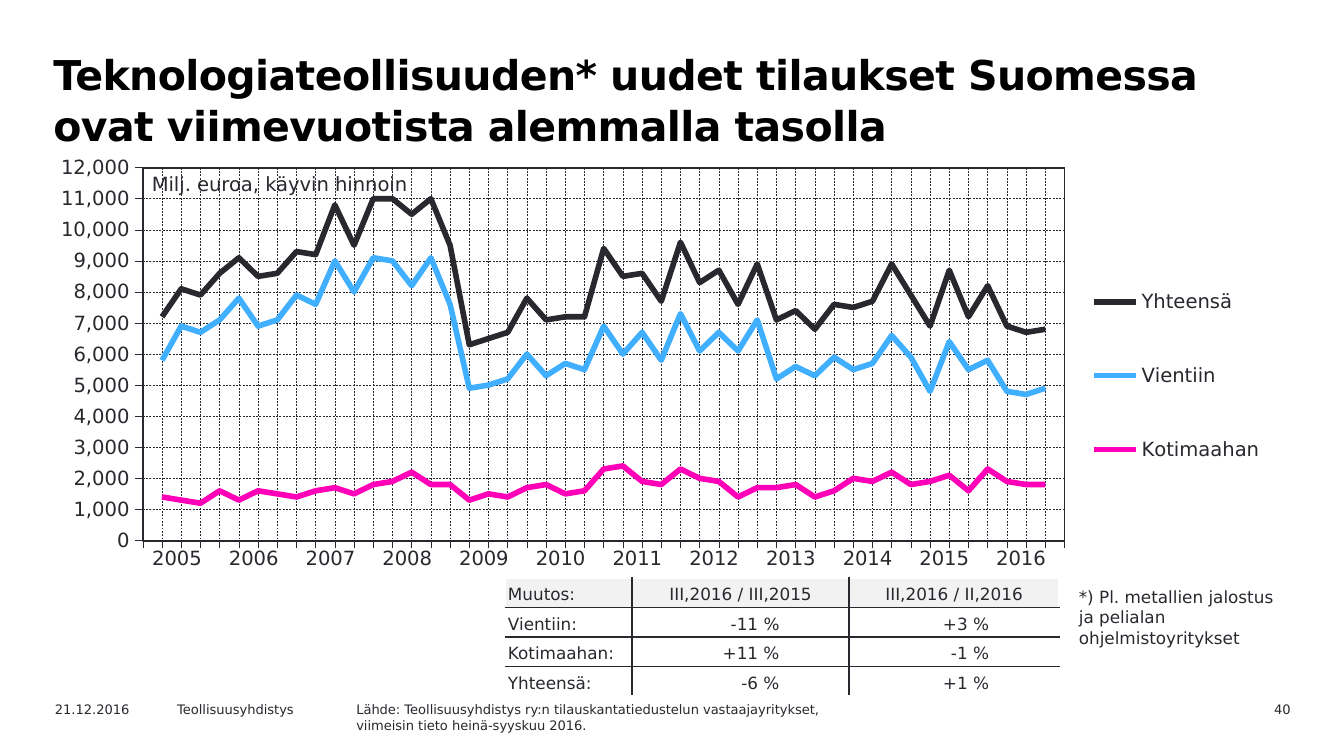
from lxml import etree
from pptx import Presentation
from pptx import util as u
from pptx.chart import data
from pptx.dml import color
from pptx.enum import chart as ec
from pptx.enum import dml, text
from pptx.oxml import ns

INK = "29282E"
WHITE = "FFFFFF"
FONT = "DejaVu Sans"
LEFT, MID, RIGHT = text.PP_ALIGN.LEFT, text.PP_ALIGN.CENTER, text.PP_ALIGN.RIGHT
PLAIN = "{2D5ABB26-0587-4C30-8999-92F81FD0307C}"
WIDE, HIGH = 23.32, 8.46

TOTAL = [72, 81, 79, 86, 91, 85, 86, 93, 92, 108, 95, 110, 110, 105, 110, 95,
         63, 65, 67, 78, 71, 72, 72, 94, 85, 86, 77, 96, 83, 87, 76, 89,
         71, 74, 68, 76, 75, 77, 89, 79, 69, 87, 72, 82, 69, 67, 68]
EXPORT = [58, 69, 67, 71, 78, 69, 71, 79, 76, 90, 80, 91, 90, 82, 91, 76,
          49, 50, 52, 60, 53, 57, 55, 69, 60, 67, 58, 73, 61, 67, 61, 71,
          52, 56, 53, 59, 55, 57, 66, 59, 48, 64, 55, 58, 48, 47, 49]
HOME = [14, 13, 12, 16, 13, 16, 15, 14, 16, 17, 15, 18, 19, 22, 18, 18,
        13, 15, 14, 17, 18, 15, 16, 23, 24, 19, 18, 23, 20, 19, 14, 17,
        17, 18, 14, 16, 20, 19, 22, 18, 19, 21, 16, 23, 19, 18, 18]
SERIES = [("Yhteensä", TOTAL, INK), ("Vientiin", EXPORT, "40AFFF"),
          ("Kotimaahan", HOME, "FF00B8")]
CHANGE = [["Muutos:", "III,2016 / III,2015", "III,2016 / II,2016"],
          ["Vientiin:", "-11 %", "+3 %"],
          ["Kotimaahan:", "+11 %", "-1 %"],
          ["Yhteensä:", "-6 %", "+1 %"]]


def rgb(code):
    return color.RGBColor.from_string(code)


def sub(node, tag, **attrs):
    return etree.SubElement(node, ns.qn(tag), **attrs)


def style(font, size, code=INK, bold=False):
    font.name = FONT
    font.size = u.Pt(size)
    font.bold = bold
    font.color.rgb = rgb(code)


def write(frame, words, size, align=LEFT, code=INK, bold=False):
    frame.text = words
    for para in frame.paragraphs:
        props = para._p.get_or_add_pPr()
        props.set("marL", "0")
        props.set("indent", "0")
        sub(props, "a:buNone")
        para.alignment = align
        para.space_before = u.Pt(0)
        style(para.font, size, code, bold)


def holder(shape, box, words, size, code=INK, bold=False):
    shape.left, shape.top, shape.width, shape.height = map(u.Cm, box)
    frame = shape.text_frame
    frame.auto_size = text.MSO_AUTO_SIZE.NONE
    frame.vertical_anchor = text.MSO_ANCHOR.TOP
    write(frame, words, size, LEFT, code, bold)
    return frame


def label(slide, box, words, size, align=LEFT, wrap=True):
    shape = slide.shapes.add_textbox(*map(u.Cm, box))
    shape.text_frame.word_wrap = wrap
    write(shape.text_frame, words, size, align)


def place(node, spot, box, inner=False):
    for old in node.findall(ns.qn("c:layout")):
        node.remove(old)
    lay = etree.Element(ns.qn("c:layout"))
    man = sub(lay, "c:manualLayout")
    if inner:
        sub(man, "c:layoutTarget", val="inner")
    sub(man, "c:xMode", val="edge")
    sub(man, "c:yMode", val="edge")
    for key, val, full in zip("xywh", box, (WIDE, HIGH, WIDE, HIGH)):
        sub(man, "c:" + key, val=str(val / full))
    node.insert(spot, lay)


def stroke(line, width, code=INK):
    line.color.rgb = rgb(code)
    line.width = u.Pt(width)


def edge(props, tag, code):
    line = sub(props, tag, w=str(u.Pt(1)))
    sub(sub(line, "a:solidFill"), "a:srgbClr", val=code)


def axis(item):
    item.has_major_gridlines = True
    item.major_tick_mark = ec.XL_TICK_MARK.OUTSIDE
    item.minor_tick_mark = ec.XL_TICK_MARK.NONE
    stroke(item.format.line, 0.22)
    grid = item.major_gridlines.format.line
    stroke(grid, 0.25)
    grid.dash_style = dml.MSO_LINE.DASH


def cross(val):
    node = val._element
    for old in node.findall(ns.qn("c:crossBetween")):
        node.remove(old)
    mode = etree.Element(ns.qn("c:crossBetween"), val="midCat")
    node.find(ns.qn("c:crosses")).addnext(mode)


def graph(slide):
    info = data.CategoryChartData(number_format="#,##0")
    info.categories = [str(n) for n in range(1, len(TOTAL) + 3)]
    for name, vals, _ in SERIES:
        info.add_series(name, [None] + [v * 100 for v in vals] + [None])
    box = map(u.Cm, (0.79, 2.82, WIDE, HIGH))
    chart = slide.shapes.add_chart(ec.XL_CHART_TYPE.LINE, *box, info).chart
    chart.has_title = False
    style(chart.font, 10.5)
    for item, (_, _, code) in zip(chart.plots[0].series, SERIES):
        stroke(item.format.line, 3, code)
        item.smooth = False
        item.marker.style = ec.XL_MARKER_STYLE.NONE
    chart.plots[0].vary_by_categories = False
    cat, val = chart.category_axis, chart.value_axis
    axis(cat)
    axis(val)
    cat.tick_label_position = ec.XL_TICK_LABEL_POSITION.NONE
    val.minimum_scale, val.maximum_scale, val.major_unit = 0, 12000, 1000
    val.tick_labels.number_format = "#,##0"
    val.tick_labels.number_format_is_linked = False
    style(val.tick_labels.font, 10.5)
    cross(val)
    chart.has_legend = True
    key = chart.legend
    key.position = ec.XL_LEGEND_POSITION.RIGHT
    key.include_in_layout = False
    style(key.font, 10.5)
    place(key._element, 1, (19.6, 1.7, 3.7, 5.16))
    area = chart._chartSpace.chart.plotArea
    place(area, 0, (1.91, 0.35, 17.42, 7.05), True)
    props = sub(area, "c:spPr")
    sub(props, "a:noFill")
    edge(props, "a:ln", INK)


def table(slide, x, y, cols, high, count):
    box = map(u.Cm, (x, y, sum(cols), high * count))
    grid = slide.shapes.add_table(count, len(cols), *box).table
    grid.first_row = grid.horz_banding = False
    grid._tbl.tblPr.find(ns.qn("a:tableStyleId")).text = PLAIN
    for col, wide in zip(grid.columns, cols):
        col.width = u.Cm(wide)
    return grid


def years(slide):
    names = [str(n) for n in range(2005, 2017)]
    grid = table(slide, 2.62, 10.21, [1.45] * len(names), 0.79, 1)
    for cell, name in zip(grid.iter_cells(), names):
        write(cell.text_frame, name, 10.5, MID)
        cell.fill.background()


def change(slide):
    grid = table(slide, 9.55, 10.92, [2.39, 4.11, 3.96], 0.56, len(CHANGE))
    for r, row in enumerate(CHANGE):
        for c, words in enumerate(row):
            cell = grid.cell(r, c)
            align = LEFT if c == 0 else MID if r == 0 else RIGHT
            write(cell.text_frame, words, 9, align)
            cell.vertical_anchor = text.MSO_ANCHOR.BOTTOM
            cell.margin_left = cell.margin_top = cell.margin_bottom = u.Cm(0.05)
            cell.margin_right = u.Cm(1.32 if align == RIGHT else 0.05)
            outer = {"L": c == 0, "R": c == 2, "T": r == 0, "B": r == 3}
            props = cell._tc.get_or_add_tcPr()
            for side, out in outer.items():
                edge(props, "a:ln" + side, WHITE if out else INK)
            cell.fill.solid()
            cell.fill.fore_color.rgb = rgb("F2F2F2" if r == 0 else WHITE)


def main():
    deck = Presentation()
    deck.slide_width, deck.slide_height = u.Cm(25.4), u.Cm(14.29)
    slide = deck.slides.add_slide(deck.slide_layouts[1])
    head = holder(slide.shapes.title, (0.71, 0.79, 22.2, 1.8),
                  "Teknologiateollisuuden* uudet tilaukset Suomessa "
                  "ovat viimevuotista alemmalla tasolla", 22, "000000", True)
    para = head.paragraphs[0]
    para.line_spacing = u.Pt(27)
    para.runs[0].font._element.set("spc", "-30")
    head.margin_left = u.Cm(0.3)
    holder(slide.placeholders[1], (6.48, 13.13, 12.88, 0.46),
           "Lähde: Teollisuusyhdistys ry:n tilauskantatiedustelun "
           "vastaajayritykset,\nviimeisin tieto heinä-syyskuu 2016.", 7)
    label(slide, (22.25, 13.13, 2.39, 0.46), "40", 7, RIGHT)
    label(slide, (0.79, 13.13, 2.54, 0.46), "21.12.2016", 7)
    label(slide, (3.1, 13.13, 3.6, 0.46), "Teollisuusyhdistys", 7)
    graph(slide)
    years(slide)
    label(slide, (2.62, 3.12, 5.61, 0.69), "Milj. euroa, käyvin hinnoin",
          10.5, wrap=False)
    change(slide)
    label(slide, (20.14, 10.97, 4.22, 1.42),
          "*) Pl. metallien jalostus ja pelialan ohjelmistoyritykset", 9)
    deck.save("out.pptx")


if __name__ == "__main__":
    main()
